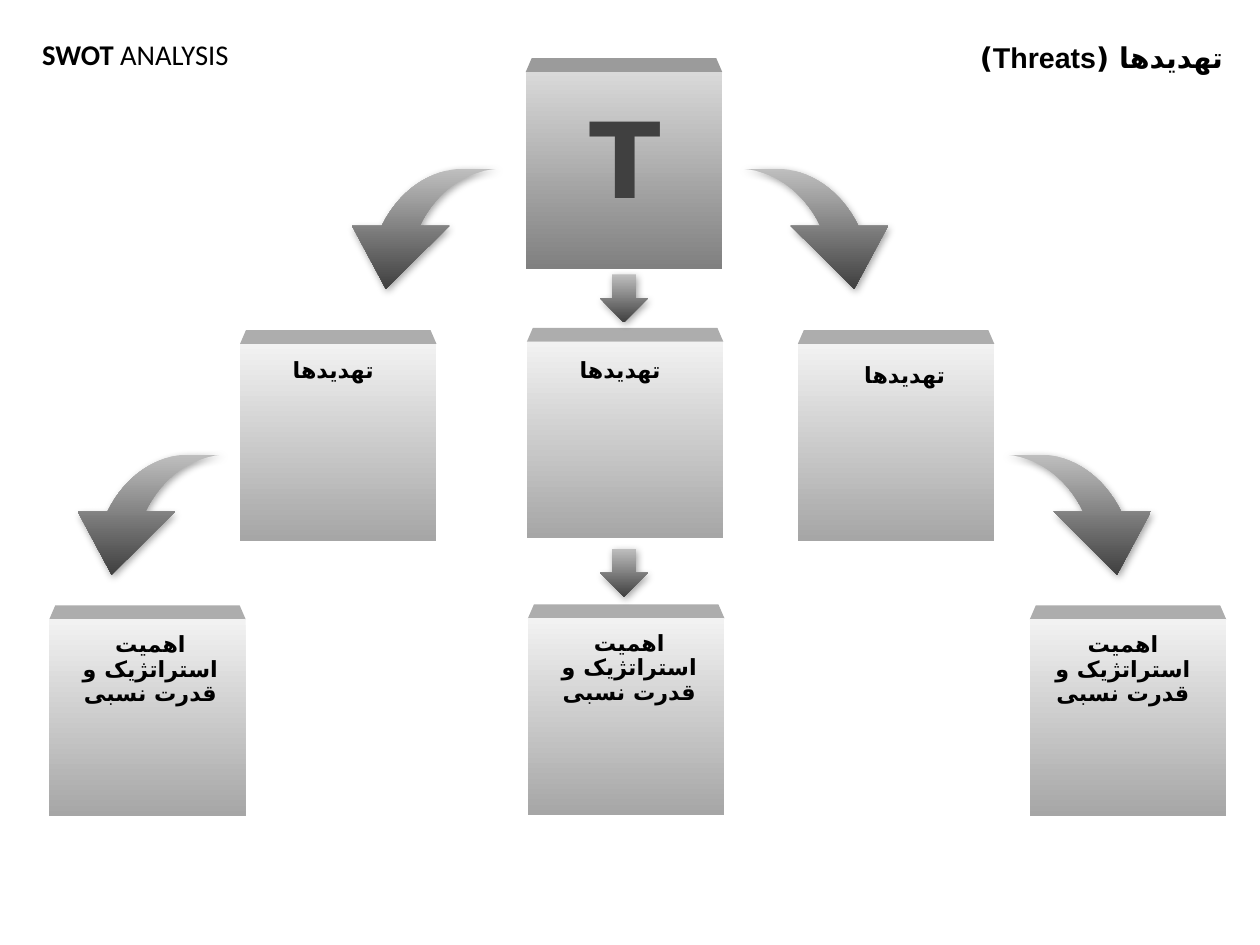
from lxml.etree import SubElement
from pptx import Presentation
from pptx.dml.color import RGBColor
from pptx.enum.shapes import MSO_SHAPE
from pptx.enum.text import MSO_AUTO_SIZE, PP_ALIGN
from pptx.oxml.ns import qn
from pptx.util import Pt

COLORS = {
    "black": "000000",
    "letter": "404040",
    "dark_top": "9B9B9B",
    "dark_start": "D9D9D9",
    "dark_end": "808080",
    "light_top": "ADADAD",
    "light_start": "F2F2F2",
    "light_end": "A6A6A6",
    "arrow_start": "BFBFBF",
    "arrow_end": "404040",
}
PERSIAN_FONT = "DejaVu Sans"
CUBE_SIZE = 123.8
LID_HEIGHT = 8.8
ARROW_WIDTH = 94.3
CURVE_STEPS = 16


def color(name):
    return RGBColor.from_string(COLORS[name])


def fill_downward(shape, tone):
    """Apply the vertical gradient of a tone and remove the outline."""
    shape.shadow.inherit = False
    shape.line.fill.background()
    shape.fill.gradient()
    shape.fill.gradient_angle = 270
    for stop, end in zip(shape.fill.gradient_stops, ("start", "end")):
        stop.color.rgb = color(f"{tone}_{end}")


def add_soft_shadow(shape):
    effects = shape._element.spPr.find(qn("a:effectLst"))
    shadow = SubElement(effects, qn("a:outerShdw"), blurRad=str(Pt(5)),
                        dist=str(Pt(2)), dir=str(62 * 60000), rotWithShape="0")
    shade = SubElement(shadow, qn("a:srgbClr"), val=COLORS["black"])
    SubElement(shade, qn("a:alpha"), val="37000")


def add_cube(slide, left, top, tone="light"):
    """Draw a square front with a narrow lid above it."""
    lid = slide.shapes.add_shape(MSO_SHAPE.TRAPEZOID, Pt(left), Pt(top - LID_HEIGHT),
                                 Pt(CUBE_SIZE), Pt(LID_HEIGHT))
    lid.adjustments[0] = 0.43
    lid.shadow.inherit = False
    lid.line.fill.background()
    lid.fill.solid()
    lid.fill.fore_color.rgb = color(f"{tone}_top")
    front = slide.shapes.add_shape(MSO_SHAPE.RECTANGLE, Pt(left), Pt(top),
                                   Pt(CUBE_SIZE), Pt(CUBE_SIZE))
    fill_downward(front, tone)


def curve_points(start, first, second, end):
    """Return points along a cubic curve, without its start."""
    points = []
    for step in range(1, CURVE_STEPS + 1):
        t = step / CURVE_STEPS
        weights = ((1 - t) ** 3, 3 * t * (1 - t) ** 2, 3 * t * t * (1 - t), t ** 3)
        points.append(tuple(
            sum(weight * value for weight, value in zip(weights, values))
            for values in zip(start, first, second, end)))
    return points


def add_curved_arrow(slide, left, top, to_left=False):
    """Draw an arrow that bends down to the right, or mirrored to the left."""
    outline = [
        (0, 0), (23.8, 0),
        *curve_points((23.8, 0), (44.9, 0), (64.8, 13.7), (75.6, 36)),
        (ARROW_WIDTH, 36), (73, 75.6), (33.1, 36), (51.8, 36),
        *curve_points((51.8, 36), (41, 13.7), (21.2, 0), (0, 0)),
    ]
    points = [(Pt(left + (ARROW_WIDTH - x if to_left else x)), Pt(top + y))
              for x, y in outline]
    builder = slide.shapes.build_freeform(*points[0])
    builder.add_line_segments(points[1:], close=True)
    arrow = builder.convert_to_shape()
    fill_downward(arrow, "arrow")
    add_soft_shadow(arrow)


def add_down_arrow(slide, left, top, size=30.2):
    arrow = slide.shapes.add_shape(MSO_SHAPE.DOWN_ARROW, Pt(left), Pt(top),
                                   Pt(size), Pt(size))
    fill_downward(arrow, "arrow")
    add_soft_shadow(arrow)


def add_text(slide, box, runs, size, font, alignment=PP_ALIGN.LEFT,
             rtl=False, fill="black"):
    """Place one paragraph; runs are pairs of text and bold."""
    left, top, width, height = box
    text_box = slide.shapes.add_textbox(Pt(left), Pt(top), Pt(width), Pt(height))
    frame = text_box.text_frame
    frame.word_wrap = True
    frame.auto_size = MSO_AUTO_SIZE.SHAPE_TO_FIT_TEXT
    paragraph = frame.paragraphs[0]
    paragraph.alignment = alignment
    paragraph.line_spacing = 0.93
    if rtl:
        paragraph._p.get_or_add_pPr().set("rtl", "1")
    for text, bold in runs:
        run = paragraph.add_run()
        run.text = text
        run.font.size = Pt(size)
        run.font.bold = bold
        run.font.name = font
        run.font.color.rgb = color(fill)
        if rtl:
            SubElement(run._r.get_or_add_rPr(), qn("a:cs"), typeface=PERSIAN_FONT)


def add_label(slide, box, text):
    add_text(slide, box, [(text, True)], 14, "Roboto", PP_ALIGN.CENTER, rtl=True)


def add_header(slide):
    add_text(slide, (19.4, 21.6, 133.2, 28.1),
             [("SWOT ", True), ("ANALYSIS", False)], 18, "Calibri")
    add_text(slide, (568.8, 23.8, 208.8, 28.1), [("تهدیدها (Threats)", True)],
             18, "Arial", PP_ALIGN.RIGHT, rtl=True)


def add_root(slide, left, top):
    add_cube(slide, left, top, "dark")
    add_text(slide, (left + 33.1, top + 17.3, 64.1, 81.4), [("T", True)],
             66, "DejaVu Sans", fill="letter")


def add_threat(slide, left, top, label_left, label_top):
    add_cube(slide, left, top)
    add_label(slide, (left + label_left, top + label_top, 65.5, 23), "تهديدها")


def add_importance(slide, left, top, label_left, text):
    add_cube(slide, left, top)
    add_label(slide, (left + label_left, top + 4.6, 123.1, 38.9), text)


def add_arrows(slide):
    for top, left_arrow, right_arrow in ((106.3, 221.8, 465.1), (286.3, 49, 630.7)):
        add_curved_arrow(slide, left_arrow, top, to_left=True)
        add_curved_arrow(slide, right_arrow, top)
    for top in (172.8, 345.6):
        add_down_arrow(slide, 378, top)


def main():
    presentation = Presentation()
    presentation.slide_width = Pt(793.75)
    presentation.slide_height = Pt(595.25)
    slide = presentation.slides.add_slide(presentation.slide_layouts[6])
    add_header(slide)
    add_root(slide, 331.2, 45.4)
    add_threat(slide, 151.2, 216.7, 25.9, 5.8)
    add_threat(slide, 331.9, 215.3, 25.9, 7.2)
    add_threat(slide, 502.6, 216.7, 34.5, 8.7)
    add_importance(slide, 31, 390.2, 2.1, "اهمیت استراتژيک و قدرت نسبی")
    add_importance(slide, 332.6, 389.5, 2.2, "اهميت استراتژيک و قدرت نسبی")
    add_importance(slide, 648.7, 390.2, -2.9, "اهميت استراتژيک و قدرت نسبی")
    add_arrows(slide)
    presentation.save("out.pptx")


if __name__ == "__main__":
    main()
